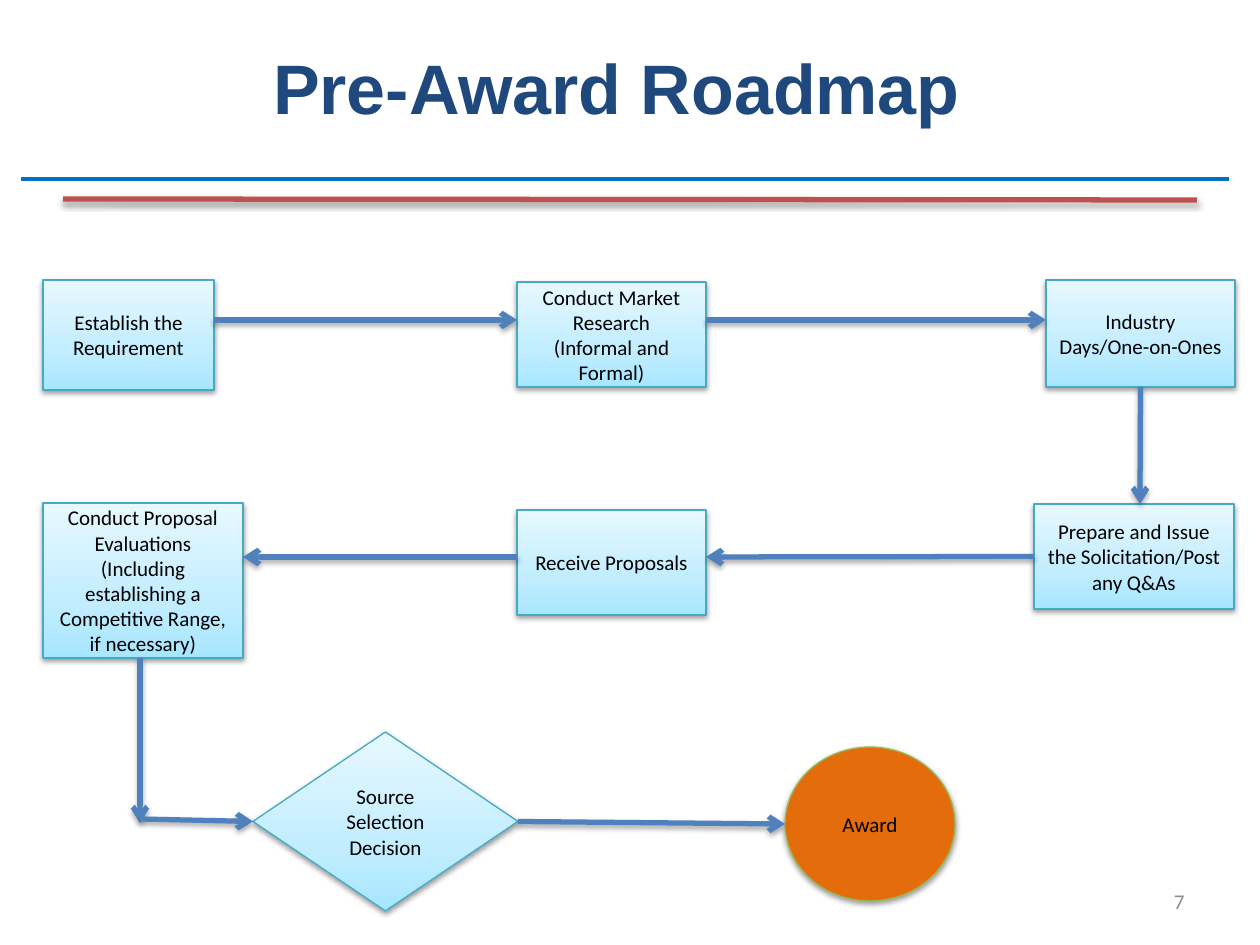
from copy import deepcopy
from dataclasses import dataclass

from lxml import etree
from pptx import Presentation
from pptx.dml.color import RGBColor
from pptx.enum.shapes import MSO_CONNECTOR, MSO_SHAPE
from pptx.enum.text import MSO_ANCHOR, PP_ALIGN
from pptx.oxml.ns import qn
from pptx.util import Emu, Pt

PROCESS = MSO_SHAPE.FLOWCHART_PROCESS
DECISION = MSO_SHAPE.FLOWCHART_DECISION
ELLIPSE = MSO_SHAPE.OVAL
STRAIGHT = MSO_CONNECTOR.STRAIGHT
MIDDLE = MSO_ANCHOR.MIDDLE
CENTER, RIGHT = PP_ALIGN.CENTER, PP_ALIGN.RIGHT
LEFT_SIDE, BOTTOM_SIDE, RIGHT_SIDE = 1, 2, 3

EMU_PER_PX = 914400 / 126


def px(length):
    return Emu(round(length * EMU_PER_PX))


@dataclass(frozen=True)
class Theme:
    title_font: str = "Arial"
    body_font: str = "Calibri"
    title_size: int = 40
    body_size: int = 12
    title: str = "1F497D"
    text: str = "000000"
    number: str = "8C8C8C"
    blue_rule: str = "0070C0"
    red_rule: str = "C0504D"
    arrow: str = "4F81BD"
    step_line: str = "46AAC5"
    award_fill: str = "E46C0A"
    award_line: str = "98B955"
    step_stops: tuple = ((0, "A7E6FF"), (0.35, "C1EDFF"), (1, "E7F8FF"))


class Flowchart:
    def __init__(self, page, theme):
        self.page = page
        self.theme = theme

    def set_text(self, box, lines, align=CENTER, **changes):
        theme = self.theme
        style = {"name": theme.body_font, "size": Pt(theme.body_size), "bold": False}
        style.update(changes)
        color = style.pop("color", theme.text)
        frame = box.text_frame
        frame.word_wrap = True
        frame.vertical_anchor = MIDDLE
        frame.text = "\n".join(lines)
        for para in frame.paragraphs:
            para.alignment = align
            for span in para.runs:
                for name, value in style.items():
                    setattr(span.font, name, value)
                span.font.color.rgb = RGBColor.from_string(color)

    def title(self, area, text):
        box = self.page.shapes.title
        box.left, box.top, box.width, box.height = map(px, area)
        theme = self.theme
        self.set_text(box, [text], name=theme.title_font, size=Pt(theme.title_size),
                      bold=True, color=theme.title)

    def label(self, area, text, color):
        box = self.page.shapes.add_textbox(*map(px, area))
        self.set_text(box, [text], align=RIGHT, color=color)

    def effects(self, item, shadow=None):
        """Set the effect list; shadow is (distance in EMU, opacity in percent)."""
        properties = item._element.spPr
        for old in properties.findall(qn("a:effectLst")):
            properties.remove(old)
        effect_list = etree.SubElement(properties, qn("a:effectLst"))
        if shadow:
            distance, opacity = shadow
            outer = etree.SubElement(effect_list, qn("a:outerShdw"), blurRad="40000",
                                     dist=str(distance), dir="5400000", rotWithShape="0")
            color = etree.SubElement(outer, qn("a:srgbClr"), val="000000")
            etree.SubElement(color, qn("a:alpha"), val=str(opacity * 1000))

    def outline(self, item, color, width):
        item.line.color.rgb = RGBColor.from_string(color)
        item.line.width = Pt(width)

    def gradient(self, box):
        box.fill.gradient()
        box.fill.gradient_angle = 90
        stop_list = box._element.spPr.find(qn("a:gradFill")).find(qn("a:gsLst"))
        stop_list.insert(1, deepcopy(stop_list[0]))
        for stop, (position, color) in zip(box.fill.gradient_stops, self.theme.step_stops):
            stop.position = position
            stop.color.rgb = RGBColor.from_string(color)

    def step(self, kind, area, lines, fill=None, line=None):
        box = self.page.shapes.add_shape(kind, *map(px, area))
        if fill:
            box.fill.solid()
            box.fill.fore_color.rgb = RGBColor.from_string(fill)
        else:
            self.gradient(box)
        self.outline(box, line or self.theme.step_line, 0.75)
        self.effects(box, (20000, 38))
        self.set_text(box, lines)
        return box

    def rule(self, start, end, color, width, shadow=None):
        line = self.page.shapes.add_connector(STRAIGHT, *map(px, start + end))
        self.outline(line, color, width)
        self.effects(line, shadow)
        return line

    def arrow(self, start, end, begin=None, finish=None):
        line = self.rule(start, end, self.theme.arrow, 3, (23000, 35))
        etree.SubElement(line._element.spPr.find(qn("a:ln")), qn("a:tailEnd"), type="arrow")
        if begin:
            line.begin_connect(*begin)
        if finish:
            line.end_connect(*finish)


def main():
    deck = Presentation()
    deck.slide_width, deck.slide_height = px(1260), px(945)
    theme = Theme()
    chart = Flowchart(deck.slides.add_slide(deck.slide_layouts[5]), theme)

    # Heading and rules
    chart.rule((21, 179), (1229, 179), theme.blue_rule, 2)
    chart.rule((63, 199), (1197, 200), theme.red_rule, 3, (23000, 35))
    chart.title((28, 39, 1177, 95), "Pre-Award Roadmap")

    # Steps
    chart.step(PROCESS, (43, 280, 171, 110), ["Establish the Requirement"])
    chart.step(PROCESS, (517, 282, 189, 105),
               ["Conduct Market Research", "(Informal and Formal)"])
    industry = chart.step(PROCESS, (1046, 280, 189, 107), ["Industry Days/One-on-Ones"])
    solicitation = chart.step(PROCESS, (1034, 504, 200, 105),
                              ["Prepare and Issue the Solicitation/Post any Q&As"])
    chart.step(PROCESS, (517, 510, 189, 105), ["Receive Proposals"])
    chart.step(PROCESS, (43, 503, 200, 155),
               ["Conduct Proposal Evaluations",
                "(Including establishing a Competitive Range, if necessary)"])
    decision = chart.step(DECISION, (253, 732, 265, 179), ["Source Selection Decision"])
    chart.step(ELLIPSE, (785, 747, 170, 154), ["Award"], theme.award_fill, theme.award_line)

    # Arrows in reading order
    top_row, middle_row, turn = 320, 557, 140
    chart.arrow((214, top_row), (517, top_row))
    chart.arrow((706, top_row), (1046, top_row))
    chart.arrow((1140, 387), (1140, 504), begin=(industry, BOTTOM_SIDE))
    chart.arrow((1034, middle_row), (706, middle_row), begin=(solicitation, LEFT_SIDE))
    chart.arrow((517, middle_row), (243, middle_row))
    chart.arrow((turn, 658), (turn, 823))
    chart.arrow((turn, 819), (253, 821), finish=(decision, LEFT_SIDE))
    chart.arrow((518, 822), (785, 824), begin=(decision, RIGHT_SIDE))

    # Page number
    chart.label((903, 876, 294, 50), "7", theme.number)

    deck.save("out.pptx")


if __name__ == "__main__":
    main()
